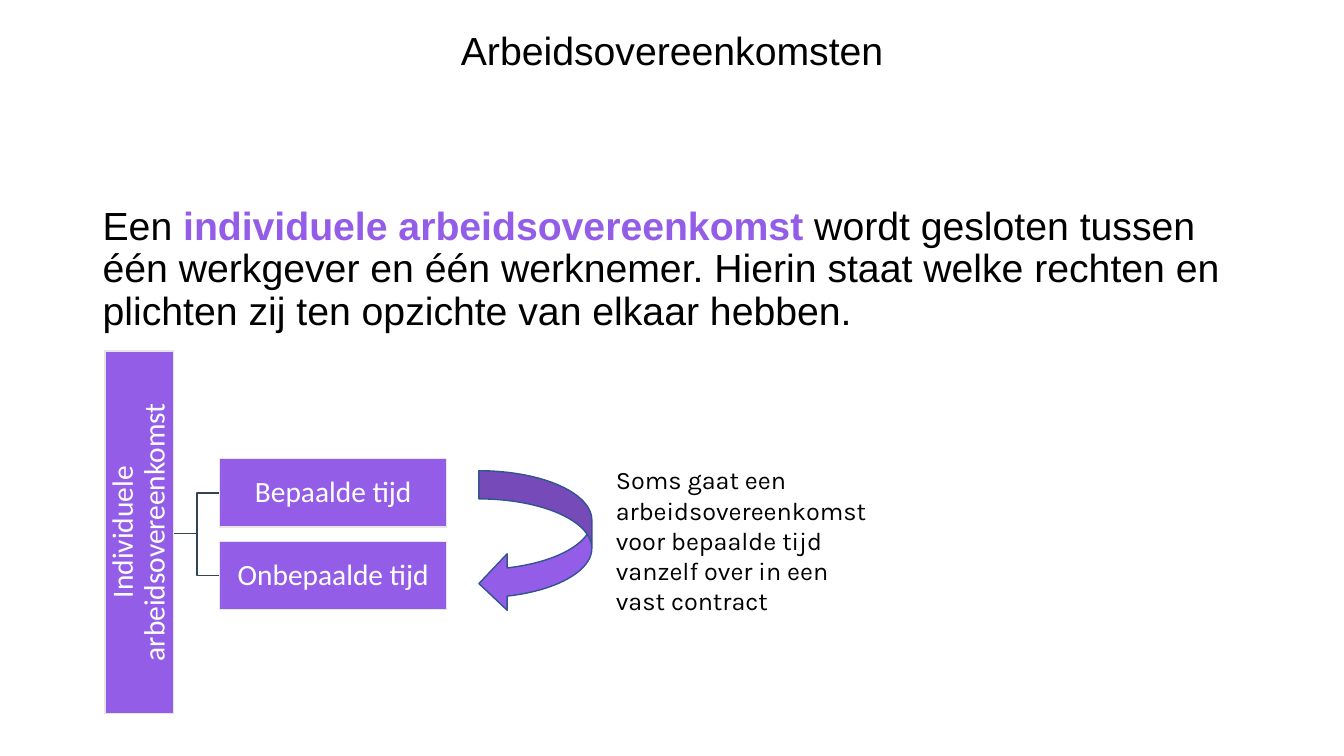
from dataclasses import dataclass

from pptx import Presentation
from pptx.dml.color import RGBColor
from pptx.enum.shapes import MSO_SHAPE
from pptx.enum.text import MSO_ANCHOR, PP_ALIGN
from pptx.shapes.autoshape import Shape
from pptx.slide import Slide
from pptx.text.text import TextFrame
from pptx.util import Inches, Pt

BLACK = RGBColor(0x00, 0x00, 0x00)
WHITE = RGBColor(0xFF, 0xFF, 0xFF)
PURPLE = RGBColor(0x94, 0x5D, 0xE8)
PALE_GREY = RGBColor(0xE7, 0xE6, 0xE6)
SLATE = RGBColor(0x36, 0x43, 0x55)
BLUE = RGBColor(0x32, 0x54, 0x91)

ROOT_RIGHT, BRANCH_LEFT = 1.73, 2.18
ROOT_MIDDLE = 5.29
BOX_HEIGHT = 0.68


@dataclass
class Box:
    text: str
    left: float
    top: float
    width: float
    rotation: float = 0

    @property
    def middle(self) -> float:
        return self.top + BOX_HEIGHT / 2


ROOT = Box("Individuele arbeidsovereenkomst", -0.42, 4.94, 3.6, 270)
BRANCHES = [
    Box("Bepaalde tijd", BRANCH_LEFT, 4.55, 2.25),
    Box("Onbepaalde tijd", BRANCH_LEFT, 5.37, 2.25),
]


def write(tf: TextFrame, text: str, *, size: float, font: str,
          color: RGBColor = BLACK, highlight: str = "",
          align: PP_ALIGN = PP_ALIGN.LEFT, spacing: float = 1.0) -> None:
    tf.word_wrap = True
    p = tf.paragraphs[0]
    p.alignment = align
    p.line_spacing = spacing
    before, match, after = text.partition(highlight) if highlight else (text, "", "")
    for part in filter(None, (before, match, after)):
        r = p.add_run()
        r.text = part
        r.font.size = Pt(size)
        r.font.name = font
        r.font.bold = part == highlight
        r.font.color.rgb = PURPLE if part == highlight else color


def add_text(s: Slide, left: float, top: float, width: float, height: float) -> TextFrame:
    return s.shapes.add_textbox(Inches(left), Inches(top), Inches(width), Inches(height)).text_frame


def add_filled(s: Slide, kind: MSO_SHAPE, left: float, top: float,
               width: float, height: float, line: RGBColor) -> Shape:
    sp = s.shapes.add_shape(kind, Inches(left), Inches(top), Inches(width), Inches(height))
    sp.shadow.inherit = False
    sp.fill.solid()
    sp.fill.fore_color.rgb = PURPLE
    sp.line.color.rgb = line
    sp.line.width = Pt(1)
    return sp


def add_box(s: Slide, box: Box) -> None:
    sp = add_filled(s, MSO_SHAPE.RECTANGLE, box.left, box.top, box.width, BOX_HEIGHT, PALE_GREY)
    sp.rotation = box.rotation
    tf = sp.text_frame
    tf.margin_left = tf.margin_right = tf.margin_top = tf.margin_bottom = Inches(0.01)
    tf.vertical_anchor = MSO_ANCHOR.MIDDLE
    write(tf, box.text, size=21, font="Calibri", color=WHITE,
          align=PP_ALIGN.CENTER, spacing=0.9)


def add_link(s: Slide, end_y: float) -> None:
    bend = (ROOT_RIGHT + BRANCH_LEFT) / 2
    points = [(bend, ROOT_MIDDLE), (bend, end_y), (BRANCH_LEFT, end_y)]
    builder = s.shapes.build_freeform(Inches(ROOT_RIGHT), Inches(ROOT_MIDDLE))
    builder.add_line_segments([(Inches(x), Inches(y)) for x, y in points], close=False)
    sp = builder.convert_to_shape()
    sp.shadow.inherit = False
    sp.fill.background()
    sp.line.color.rgb = SLATE
    sp.line.width = Pt(1)


def main() -> None:
    prs = Presentation()
    prs.slide_width, prs.slide_height = Inches(13.33), Inches(7.5)
    s = prs.slides.add_slide(prs.slide_layouts[6])

    write(add_text(s, 2.34, 0.21, 8.65, 0.57), "Arbeidsovereenkomsten",
          size=28, font="Arial", align=PP_ALIGN.CENTER)
    write(add_text(s, 0.92, 2, 11.5, 4.76),
          "Een individuele arbeidsovereenkomst wordt gesloten tussen één werkgever en "
          "één werknemer. Hierin staat welke rechten en plichten zij ten opzichte van "
          "elkaar hebben.",
          size=28, font="Arial", highlight="individuele arbeidsovereenkomst ", spacing=0.9)

    for branch in BRANCHES:
        add_link(s, branch.middle)
    for box in [ROOT, *BRANCHES]:
        add_box(s, box)

    add_filled(s, MSO_SHAPE.CURVED_LEFT_ARROW, 4.75, 4.67, 1.12, 1.4, BLUE)
    write(add_text(s, 6.01, 4.56, 2.83, 1.62),
          "Soms gaat een arbeidsovereenkomst voor bepaalde tijd vanzelf over in een "
          "vast contract",
          size=18, font="Karla")
    prs.save("out.pptx")


if __name__ == "__main__":
    main()
